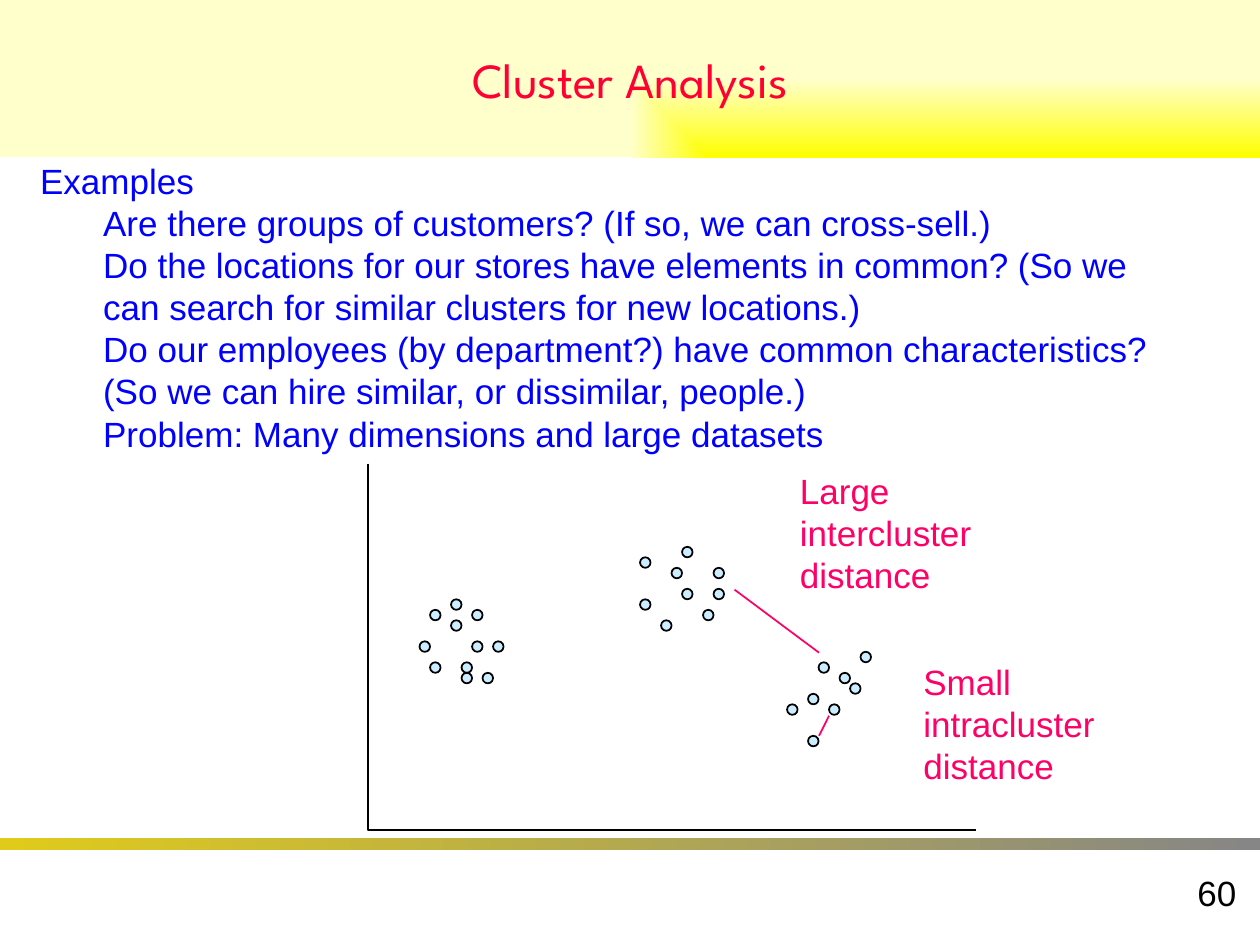
import pptx
import pptx.util
import pptx.dml.color
import pptx.enum.shapes
import pptx.enum.text
import pptx.oxml.ns
from lxml import etree

Inches = pptx.util.Inches
Pt = pptx.util.Pt
Align = pptx.enum.text.PP_ALIGN
Anchor = pptx.enum.text.MSO_ANCHOR
Kind = pptx.enum.shapes.MSO_SHAPE
qn = pptx.oxml.ns.qn

PINK = "FF0066"
BLUE = "0000FF"
BLACK = "000000"

# Points as (column, row) on a grid of twelfths of an inch
STEP = 1 / 12
LEFT, TOP = 3.33, 4.34
CLUSTERS = [
    [(1, 6), (3, 7), (0, 9), (4, 11), (5, 9), (5, 6), (3, 5), (1, 11),
     (4, 12), (7, 9), (6, 12)],
    [(25, 0), (28, 2), (24, 2), (25, 4), (28, 4), (27, 6), (23, 7),
     (21, 5), (21, 1)],
    [(35, 15), (39, 15), (38, 11), (37, 18), (37, 14), (40, 12),
     (42, 10), (41, 13)],
]

LINES = [
    "Examples",
    "Are there groups of customers? (If so, we can cross-sell.)",
    "Do the locations for our stores have elements in common? "
    "(So we can search for similar clusters for new locations.)",
    "Do our employees (by department?) have common characteristics? "
    "(So we can hire similar, or dissimilar, people.)",
    "Problem: Many dimensions and large datasets",
]


def color(code):
    return pptx.dml.color.RGBColor.from_string(code)


def style(para, size, font, code, align=Align.LEFT):
    para.alignment = align
    for run in para.runs:
        run.font.size = Pt(size)
        run.font.name = font
        run.font.color.rgb = color(code)


def place(shape, *box):
    shape.left, shape.top, shape.width, shape.height = map(Inches, box)


def blend(shape, first, last):
    shape.fill.gradient()
    shape.fill.gradient_angle = 0
    for stop, code in zip(shape.fill.gradient_stops, (first, last)):
        stop.color.rgb = color(code)


def outline(shape, code):
    shape.line.color.rgb = color(code)
    shape.line.width = Pt(1)


def add_text(slide, box, lines, code, align=Align.LEFT, anchor=Anchor.TOP):
    frame = slide.shapes.add_textbox(*map(Inches, box)).text_frame
    frame.word_wrap = True
    frame.vertical_anchor = anchor
    frame.text = "\n".join(lines)
    for para in frame.paragraphs:
        style(para, 20, "Arial", code, align)
    return frame


def add_title(slide, text):
    title = slide.shapes.title
    place(title, 0, 0, 10, 1.25)
    blend(title, "FFFF00", "FFFFCC")
    # Let the colours spread from the lower right corner
    lin = title.element.find(".//" + qn("a:lin"))
    focus = etree.Element(qn("a:path"), {"path": "rect"})
    etree.SubElement(focus, qn("a:fillToRect"), l="100000", t="100000")
    lin.getparent().replace(lin, focus)
    title.text_frame.text = text
    title.text_frame.vertical_anchor = Anchor.MIDDLE
    style(title.text_frame.paragraphs[0], 28, "League Spartan", "FF0033",
          Align.CENTER)


def add_bar(slide):
    bar = slide.shapes.add_shape(Kind.RECTANGLE, 0, 0, 0, 0)
    place(bar, 0, 6.65, 10, 0.1)
    bar.shadow.inherit = False
    bar.line.fill.background()
    blend(bar, "E0CB1B", "868686")


def add_axes(slide):
    pen = slide.shapes.build_freeform(Inches(2.92), Inches(3.68))
    pen.add_line_segments([(Inches(2.92), Inches(6.59)),
                           (Inches(7.75), Inches(6.59))], close=False)
    axes = pen.convert_to_shape()
    axes.shadow.inherit = False
    axes.fill.background()
    outline(axes, BLACK)


def add_dot(slide, col, row):
    dot = slide.shapes.add_shape(Kind.OVAL, 0, 0, 0, 0)
    place(dot, LEFT + col * STEP, TOP + row * STEP, STEP, STEP)
    dot.shadow.inherit = False
    dot.fill.solid()
    dot.fill.fore_color.rgb = color("CCECFF")
    outline(dot, BLACK)


def add_line(slide, *ends):
    line = slide.shapes.add_connector(
        pptx.enum.shapes.MSO_CONNECTOR.STRAIGHT, *map(Inches, ends))
    outline(line, PINK)
    etree.SubElement(line.element.spPr, qn("a:effectLst"))


def main():
    deck = pptx.Presentation()
    deck.slide_width, deck.slide_height = Inches(10), Inches(7.5)
    slide = deck.slides.add_slide(deck.slide_layouts[5])

    # Frame of the slide
    add_bar(slide)
    add_title(slide, "Cluster Analysis")
    add_text(slide, (7.83, 6.83, 2.08, 0.5), ["60"], BLACK, Align.RIGHT,
             Anchor.MIDDLE)

    # Scatter of clusters
    add_axes(slide)
    for group in CLUSTERS:
        for col, row in group:
            add_dot(slide, col, row)

    # Distances between and within clusters
    add_text(slide, (7.23, 5.19, 1.6, 1.1),
             ["Small intracluster distance"], PINK)
    add_text(slide, (6.25, 3.68, 1.85, 1.1),
             ["Large intercluster distance"], PINK)
    add_line(slide, 5.83, 4.68, 6.5, 5.18)
    add_line(slide, 6.58, 5.68, 6.5, 5.84)

    # Examples, indented under their heading
    frame = add_text(slide, (0.22, 1.22, 9.36, 2.46), LINES, BLUE)
    for para in frame.paragraphs[1:]:
        para.level = 1
        props = para._p.get_or_add_pPr()
        props.set("marL", str(Inches(0.5)))
        props.set("indent", "0")

    deck.save("out.pptx")


if __name__ == "__main__":
    main()
